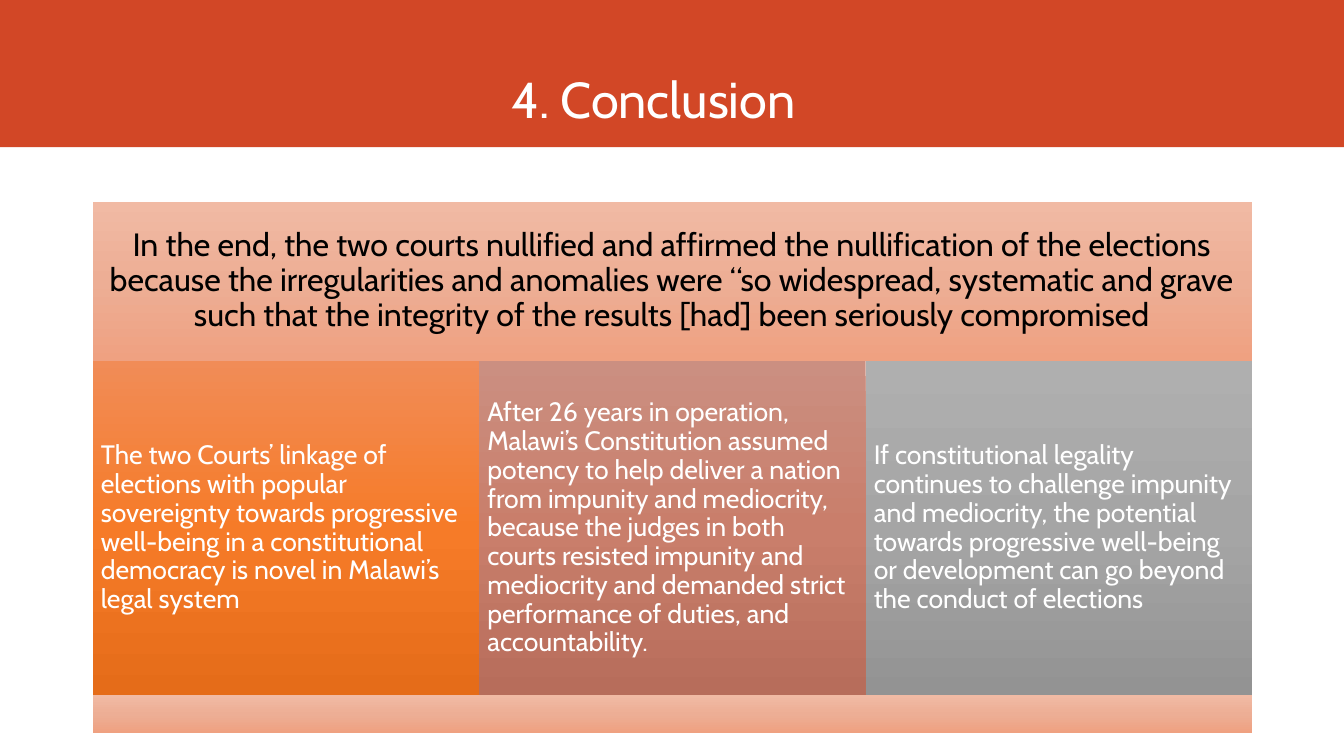
from copy import deepcopy
from dataclasses import dataclass

from pptx import Presentation
from pptx.dml.color import RGBColor
from pptx.enum.shapes import MSO_SHAPE as Shape
from pptx.enum.text import MSO_ANCHOR as Anchor, PP_ALIGN as Align
from pptx.oxml.ns import qn
from pptx.util import Inches, Pt

FONT = "Cabin"
WHITE = RGBColor(0xFF, 0xFF, 0xFF)
BLACK = RGBColor(0x00, 0x00, 0x00)
BANNER_RED = RGBColor(0xD2, 0x47, 0x26)

# Gradients, top to bottom
PEACH = (RGBColor(0xF1, 0xBA, 0xA4), RGBColor(0xED, 0xAE, 0x95), RGBColor(0xEF, 0xA1, 0x81))
ORANGE = (RGBColor(0xF1, 0x8C, 0x57), RGBColor(0xF6, 0x7B, 0x28), RGBColor(0xE5, 0x6C, 0x19))
CLAY = (RGBColor(0xCB, 0x8F, 0x81), RGBColor(0xC9, 0x7E, 0x6B), RGBColor(0xB7, 0x6D, 0x5B))
GRAY = (RGBColor(0xAF, 0xAF, 0xAF), RGBColor(0xA5, 0xA5, 0xA5), RGBColor(0x93, 0x93, 0x93))

# Grid: three equal columns; heading, body and footer rows
GRID_LEFT, GRID_TOP, GRID_WIDTH = 0.92, 2.0, 11.5
COLUMN_COUNT = 3
COLUMN_WIDTH = GRID_WIDTH / COLUMN_COUNT
ROW_HEIGHTS = (1.58, 3.32, 0.37)


@dataclass(frozen=True)
class Panel:
    row: int
    column: int
    span: int
    gradient: tuple[RGBColor, ...]
    text: str = ""
    size: int = 19
    color: RGBColor = WHITE
    align: Align = Align.LEFT
    inset: float = 0.08


PANELS = (
    Panel(0, 0, COLUMN_COUNT, PEACH,
          "In the end, the two courts nullified and affirmed the nullification of the "
          "elections because the irregularities and anomalies were “so widespread, "
          "systematic and grave such that the integrity of the results [had] been "
          "seriously compromised",
          size=23, color=BLACK, align=Align.CENTER, inset=0.1),
    Panel(1, 0, 1, ORANGE,
          "The two Courts’ linkage of elections with popular sovereignty towards "
          "progressive well-being in a constitutional democracy is novel in Malawi’s "
          "legal system"),
    Panel(1, 1, 1, CLAY,
          "After 26 years in operation, Malawi’s Constitution assumed potency to help "
          "deliver a nation from impunity and mediocrity, because the judges in both "
          "courts resisted impunity and mediocrity and demanded strict performance of "
          "duties, and accountability."),
    Panel(1, 2, 1, GRAY,
          "If constitutional legality continues to challenge impunity and mediocrity, "
          "the potential towards progressive well-being or development can go beyond "
          "the conduct of elections"),
    Panel(2, 0, COLUMN_COUNT, PEACH),
)


def add_block(slide, left: float, top: float, width: float, height: float):
    block = slide.shapes.add_shape(
        Shape.RECTANGLE, Inches(left), Inches(top), Inches(width), Inches(height))
    block.shadow.inherit = False
    block.line.fill.background()
    return block


def write(frame, text: str, size: int, color: RGBColor, align: Align, anchor: Anchor):
    frame.word_wrap = True
    frame.vertical_anchor = anchor
    paragraph = frame.paragraphs[0]
    paragraph.alignment = align
    run = paragraph.add_run()
    run.text = text
    run.font.name = FONT
    run.font.size = Pt(size)
    run.font.color.rgb = color
    return paragraph


def fill_gradient(block, colors: tuple[RGBColor, ...]) -> None:
    block.fill.gradient()
    block.fill.gradient_angle = 270
    # The preset gradient has two stops; a third goes between them
    stop_list = block.fill._xPr.find(qn("a:gradFill")).find(qn("a:gsLst"))
    stop_list.insert(1, deepcopy(stop_list[0]))
    for index, (stop, color) in enumerate(zip(block.fill.gradient_stops, colors)):
        stop.position = index / (len(colors) - 1)
        stop.color.rgb = color


def add_panel(slide, panel: Panel) -> None:
    block = add_block(slide,
                      GRID_LEFT + panel.column * COLUMN_WIDTH,
                      GRID_TOP + sum(ROW_HEIGHTS[:panel.row]),
                      panel.span * COLUMN_WIDTH,
                      ROW_HEIGHTS[panel.row])
    fill_gradient(block, panel.gradient)
    if panel.text:
        frame = block.text_frame
        frame.margin_left = frame.margin_right = Inches(panel.inset)
        frame.margin_top = frame.margin_bottom = Inches(panel.inset)
        paragraph = write(frame, panel.text, panel.size, panel.color,
                          panel.align, Anchor.MIDDLE)
        paragraph.line_spacing = 0.9


def main() -> None:
    deck = Presentation()
    deck.slide_width, deck.slide_height = Inches(13.33), Inches(7.5)
    slide = deck.slides.add_slide(deck.slide_layouts[6])

    # Title banner
    banner = add_block(slide, 0, 0, 13.33, 1.46)
    banner.fill.solid()
    banner.fill.fore_color.rgb = BANNER_RED
    title = slide.shapes.add_textbox(Inches(0.66), Inches(0.24), Inches(11.76), Inches(1.08))
    write(title.text_frame, "4. Conclusion ", 36, WHITE, Align.CENTER, Anchor.BOTTOM)

    # Conclusion panels
    for panel in PANELS:
        add_panel(slide, panel)

    deck.save("out.pptx")


if __name__ == "__main__":
    main()
